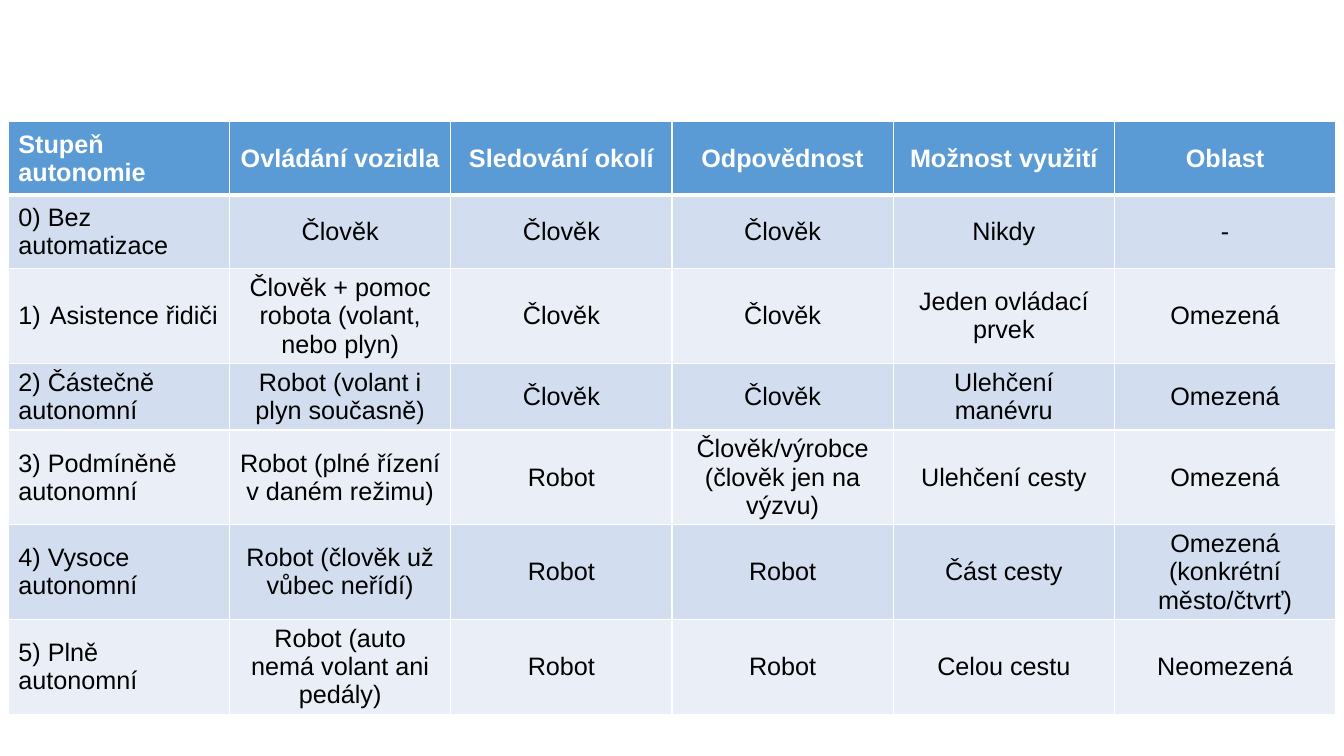
from lxml.etree import SubElement
from pptx import Presentation
from pptx.dml.color import RGBColor
from pptx.enum.text import MSO_ANCHOR, PP_ALIGN
from pptx.oxml.ns import qn
from pptx.util import Cm, Pt

COLORS = {
    "header": "5B9BD5",
    "odd_level": "D2DEEF",
    "even_level": "EAEFF7",
    "border": "FFFFFF",
    "header_text": "FFFFFF",
    "level_text": "000000",
}
HEADINGS = ["Stupeň autonomie", "Ovládání vozidla", "Sledování okolí",
            "Odpovědnost", "Možnost využití", "Oblast"]
LEVELS = [
    ["0) Bez automatizace", "Člověk", "Člověk", "Člověk", "Nikdy", "-"],
    ["Asistence řidiči", "Člověk + pomoc robota (volant, nebo plyn)",
     "Člověk", "Člověk", "Jeden ovládací prvek", "Omezená"],
    ["2) Částečně autonomní", "Robot (volant i plyn současně)",
     "Člověk", "Člověk", "Ulehčení manévru", "Omezená"],
    ["3) Podmíněně autonomní", "Robot (plné řízení v daném režimu)",
     "Robot", "Člověk/výrobce (člověk jen na výzvu)", "Ulehčení cesty", "Omezená"],
    ["4) Vysoce autonomní", "Robot (člověk už vůbec neřídí)",
     "Robot", "Robot", "Část cesty", "Omezená (konkrétní město/čtvrť)"],
    ["5) Plně autonomní", "Robot (auto nemá volant ani pedály)",
     "Robot", "Robot", "Celou cestu", "Neomezená"],
]
NUMBERED_LEVEL = "Asistence řidiči"
TALL_ROWS = 2


def write_text(frame, text, *, color, bold=False, align=PP_ALIGN.LEFT, numbered=False):
    paragraph = frame.paragraphs[0]
    paragraph.alignment = align
    if numbered:
        properties = paragraph._p.get_or_add_pPr()
        properties.set("marL", str(Cm(0.79)))
        properties.set("indent", str(-Cm(0.79)))
        SubElement(properties, qn("a:buFont"), typeface="+mj-lt")
        SubElement(properties, qn("a:buAutoNum"), type="arabicParenR")
    run = paragraph.add_run()
    run.text = text
    run.font.name = "Arial"
    run.font.size = Pt(18)
    run.font.bold = bold
    run.font.color.rgb = RGBColor.from_string(color)


def draw_borders(cell, **widths):
    properties = cell._tc.get_or_add_tcPr()
    for side in "LRTB":
        line = SubElement(properties, qn(f"a:ln{side}"), w=str(Pt(widths.get(side, 1))))
        fill = SubElement(line, qn("a:solidFill"))
        SubElement(fill, qn("a:srgbClr"), val=COLORS["border"])


def paint_cell(cell, color):
    cell.fill.solid()
    cell.fill.fore_color.rgb = RGBColor.from_string(color)
    cell.vertical_anchor = MSO_ANCHOR.MIDDLE


def add_autonomy_table(slide, left, top, width, height):
    rows = [HEADINGS, *LEVELS]
    autonomy = slide.shapes.add_table(
        len(rows), len(HEADINGS), left, top, width, height).table
    for column in autonomy.columns:
        column.width = width // len(HEADINGS)
    for r, texts in enumerate(rows):
        autonomy.rows[r].height = Cm(1.85 if r < TALL_ROWS else 1.45)
        is_header = r == 0
        fill = "header" if is_header else "odd_level" if r % 2 else "even_level"
        for c, text in enumerate(texts):
            cell = autonomy.cell(r, c)
            draw_borders(cell, B=3 if is_header else 1, T=3 if r == 1 else 1)
            paint_cell(cell, COLORS[fill])
            write_text(
                cell.text_frame, text,
                color=COLORS["header_text" if is_header else "level_text"],
                bold=is_header,
                align=PP_ALIGN.CENTER if c else PP_ALIGN.LEFT,
                numbered=text == NUMBERED_LEVEL)


def main():
    deck = Presentation()
    deck.slide_width, deck.slide_height = Cm(33.87), Cm(19.05)
    slide = deck.slides.add_slide(deck.slide_layouts[6])
    add_autonomy_table(slide, Cm(0.21), Cm(3.07), Cm(33.45), Cm(10.95))
    deck.save("out.pptx")


if __name__ == "__main__":
    main()
